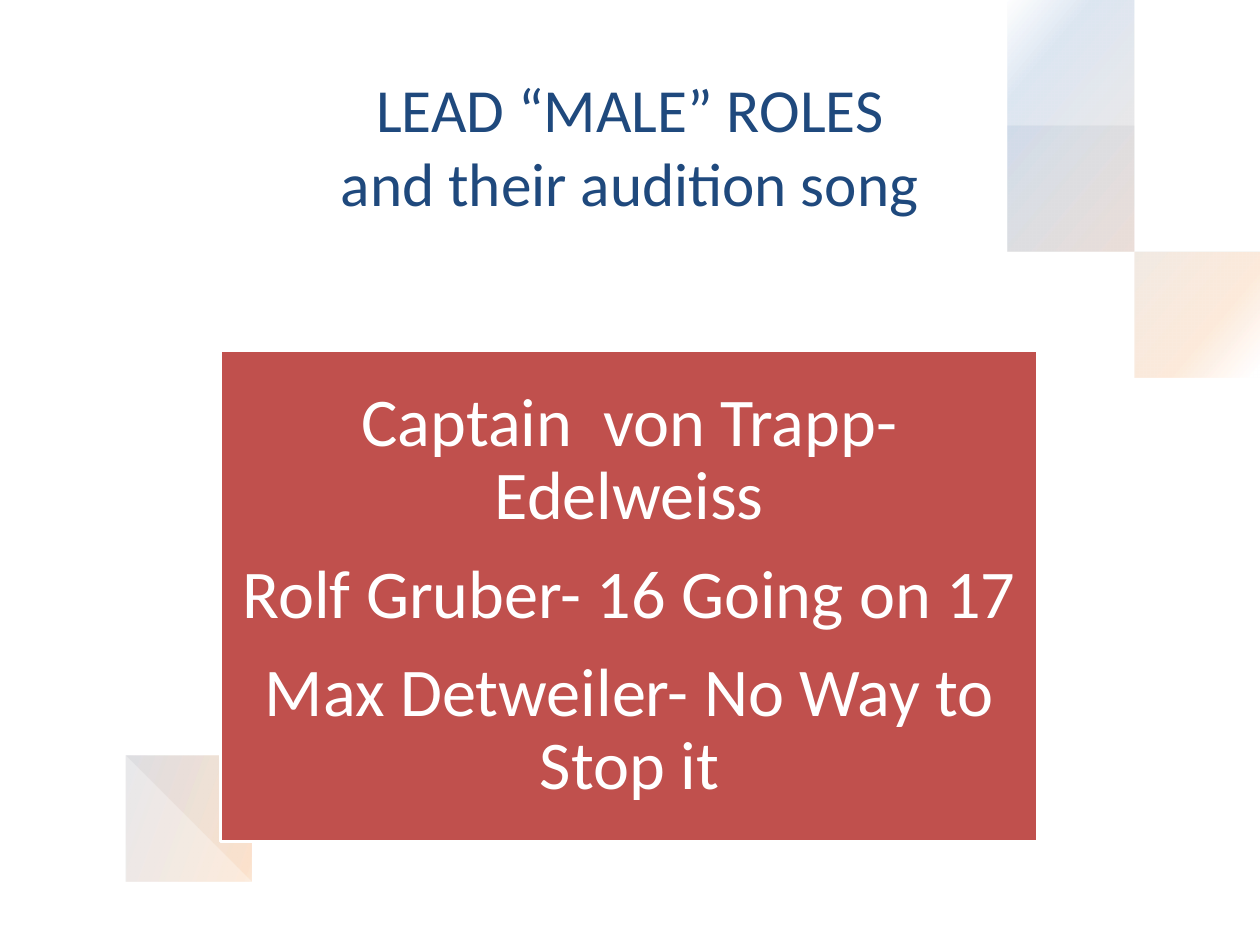
"""Build the slide of lead roles and their audition songs."""
from dataclasses import dataclass

from pptx import Presentation, util as u
from pptx.dml.color import RGBColor
from pptx.enum import shapes, text
from pptx.oxml import parse_xml
from pptx.oxml.ns import nsdecls

COLORS = {
    "white": "FFFFFF",
    "navy": "1F497D",
    "red": "C0504D",
    "orange": "F79646",
    "blue": "4F81BD",
}
GRADIENT_STOPS = ((2, "white"), (16, "orange"), (85, "blue"), (100, "white"))
OPACITY = 10
CURVE_STEPS = 32
ROLES = (
    "Captain  von Trapp- Edelweiss",
    "Rolf Gruber- 16 Going on 17",
    "Max Detweiler- No Way to Stop it",
)

Point = tuple[float, float]
Curve = tuple[Point, Point, Point, Point]


@dataclass(frozen=True)
class Band:
    outer: Curve
    inner: Curve
    angle: int


TOP_ANGLE, BOTTOM_ANGLE = 140, 160
TOP_EDGE: Curve = ((8, 0), (8.2, 1.46), (8.9, 2.77), (10, 3.32))
BOTTOM_EDGE: Curve = ((0, 5.72), (0.95, 5.45), (1.87, 6.4), (1.97, 7.5))
BANDS = (
    Band(((7.78, 0), (7.9, 1.6), (8.9, 2.95), (10, 3.35)),
         ((8.02, 0), (8.18, 1.4), (8.9, 2.8), (10, 3.28)), TOP_ANGLE),
    Band(TOP_EDGE, ((8.56, 0), (8.67, 0.9), (9.2, 2.1), (10, 2.51)), TOP_ANGLE),
    Band(((7.98, 0), (8.15, 1.45), (8.95, 2.95), (10, 3.33)),
         ((8.23, 0), (8.35, 1.2), (9, 2.65), (10, 3.08)), TOP_ANGLE),
    Band(TOP_EDGE, ((8.48, 0), (8.58, 1), (9.15, 2.2), (10, 2.64)), TOP_ANGLE),
    Band(BOTTOM_EDGE, ((0, 6.13), (0.75, 5.9), (1.55, 6.6), (1.65, 7.5)), BOTTOM_ANGLE),
    Band(BOTTOM_EDGE, ((0, 6.06), (0.78, 5.82), (1.6, 6.55), (1.71, 7.5)), BOTTOM_ANGLE),
    Band(BOTTOM_EDGE, ((0, 5.88), (0.9, 5.6), (1.78, 6.5), (1.88, 7.5)), BOTTOM_ANGLE),
    Band(((0, 5.59), (0.98, 5.27), (1.9, 6.3), (1.98, 7.5)), BOTTOM_EDGE, BOTTOM_ANGLE),
)


def color(name: str) -> RGBColor:
    return RGBColor.from_string(COLORS[name])


def apply_format(target, values: dict) -> None:
    for name, value in values.items():
        setattr(target, name, value)


def sample(curve: Curve) -> list[Point]:
    points = []
    for step in range(CURVE_STEPS + 1):
        t = step / CURVE_STEPS
        weights = ((1 - t) ** 3, 3 * t * (1 - t) ** 2, 3 * t * t * (1 - t), t ** 3)
        x, y = (sum(w * point[axis] for w, point in zip(weights, curve)) for axis in (0, 1))
        points.append((x, y))
    return points


def draw_band(slide, band: Band) -> None:
    outline = sample(band.outer) + sample(band.inner)[::-1]
    builder = slide.shapes.build_freeform(*outline[0], scale=u.Inches(1))
    builder.add_line_segments(outline[1:], close=True)
    shape = builder.convert_to_shape()
    shape.shadow.inherit = False
    shape.line.fill.background()
    shape.fill.gradient()
    shape.fill.gradient_angle = band.angle
    stops = shape._element.spPr.find(".//{*}gsLst")
    for stop in list(stops):
        stops.remove(stop)
    for position, name in GRADIENT_STOPS:
        stops.append(parse_xml(
            f'<a:gs {nsdecls("a")} pos="{position * 1000}"><a:srgbClr val="{COLORS[name]}">'
            f'<a:alpha val="{OPACITY * 1000}"/></a:srgbClr></a:gs>'))


def write_paragraph(paragraph, content: str, size: int, name: str, layout: dict) -> None:
    paragraph.text = content
    apply_format(paragraph, {"alignment": text.PP_ALIGN.CENTER, **layout})
    for run in paragraph.runs:
        apply_format(run.font, {"name": "Calibri", "size": u.Pt(size)})
        run.font.color.rgb = color(name)


def draw_title(slide) -> None:
    title = slide.shapes.title
    apply_format(title, {"left": u.Inches(0.66), "top": u.Inches(0.5),
                         "width": u.Inches(8.68), "height": u.Inches(1.3)})
    frame = title.text_frame
    apply_format(frame, {"auto_size": text.MSO_AUTO_SIZE.NONE, "word_wrap": True,
                         "vertical_anchor": text.MSO_ANCHOR.MIDDLE})
    write_paragraph(frame.paragraphs[0], "LEAD “MALE” ROLES\vand their audition song",
                    35, "navy", {})


def draw_roles(slide) -> None:
    card = slide.shapes.add_shape(
        shapes.MSO_SHAPE.RECTANGLE,
        u.Inches(1.75), u.Inches(2.78), u.Inches(6.49), u.Inches(3.9))
    card.shadow.inherit = False
    card.fill.solid()
    card.fill.fore_color.rgb = color("red")
    card.line.color.rgb = color("white")
    card.line.width = u.Pt(2)
    frame = card.text_frame
    apply_format(frame, {"word_wrap": True, "vertical_anchor": text.MSO_ANCHOR.MIDDLE})
    apply_format(frame, {f"margin_{side}": u.Inches(0.16)
                         for side in ("left", "top", "right", "bottom")})
    for index, role in enumerate(ROLES):
        paragraph = frame.add_paragraph() if index else frame.paragraphs[0]
        write_paragraph(paragraph, role, 39, "white",
                        {"line_spacing": 0.9, "space_after": u.Pt(14)})


def main() -> None:
    presentation = Presentation()
    apply_format(presentation, {"slide_width": u.Inches(10), "slide_height": u.Inches(7.5)})
    slide = presentation.slides.add_slide(presentation.slide_layouts[5])
    slide.background.fill.solid()
    slide.background.fill.fore_color.rgb = color("white")
    draw_title(slide)
    for band in BANDS:
        draw_band(slide, band)
    draw_roles(slide)
    presentation.save("out.pptx")


if __name__ == "__main__":
    main()
